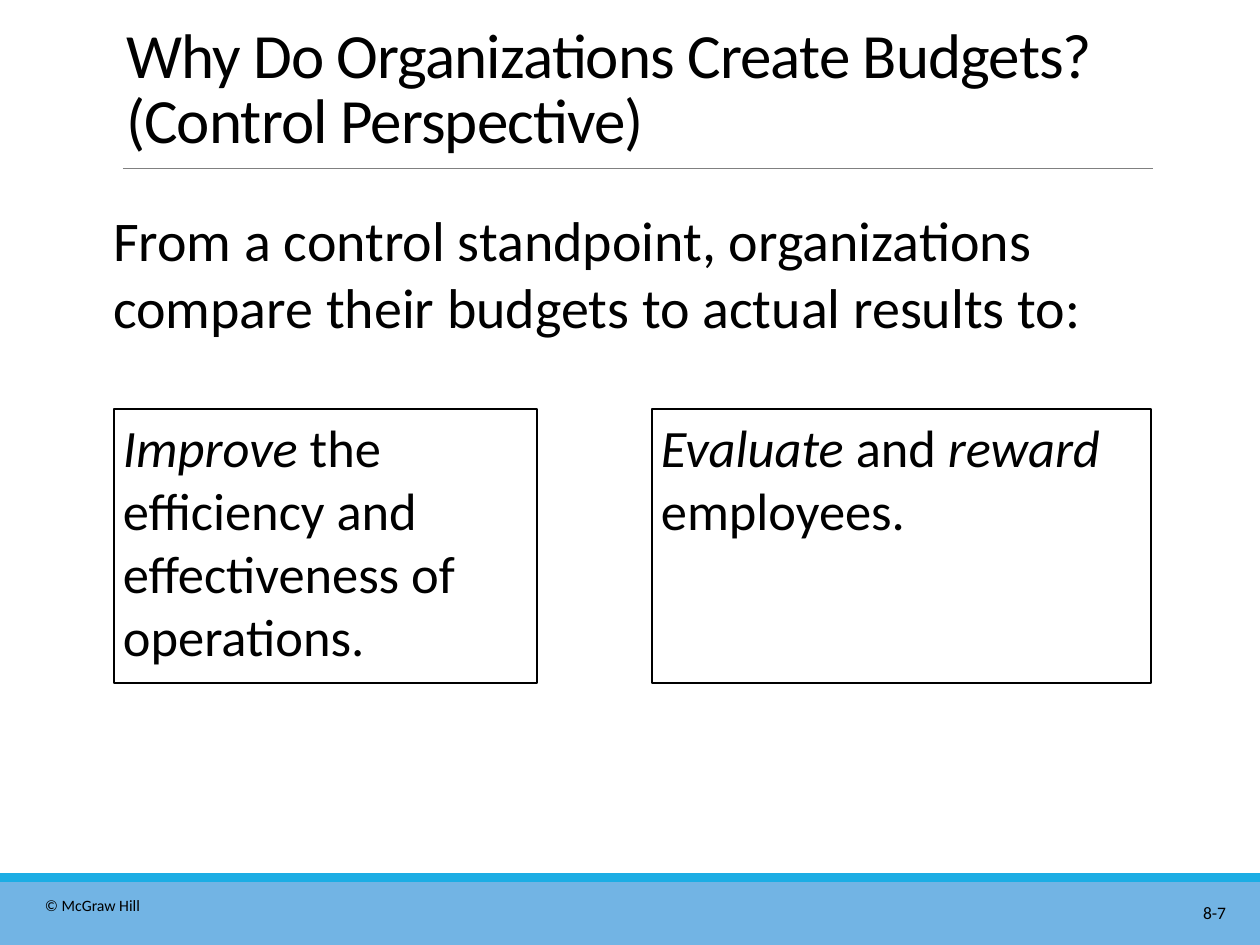
import dataclasses

import pptx
import pptx.dml.color
import pptx.enum.shapes
import pptx.enum.text
import pptx.oxml
import pptx.oxml.ns
import pptx.util

EMU_PER_INCH = 914400
PX_PER_INCH = 126
ALIGN = pptx.enum.text.PP_ALIGN
ANCHOR = pptx.enum.text.MSO_ANCHOR


@dataclasses.dataclass(frozen=True)
class Theme:
    font: str = "Calibri"
    ink: str = "000000"
    rule: str = "808080"
    band: str = "72B4E4"
    stripe: str = "1CADE4"
    title_size: int = 36
    intro_size: int = 32
    goal_size: int = 30
    number_size: int = 10
    copyright_size: int = 9


THEME = Theme()


def px(length):
    return pptx.util.Emu(round(length * EMU_PER_INCH / PX_PER_INCH))


def color(value):
    return pptx.dml.color.RGBColor.from_string(value)


def format_runs(paragraph, size):
    for run in paragraph.runs:
        run.font.name = THEME.font
        run.font.size = pptx.util.Pt(size)
        run.font.color.rgb = color(THEME.ink)


def set_frame(frame, side_inset, anchor=ANCHOR.TOP):
    frame.word_wrap = True
    frame.auto_size = pptx.enum.text.MSO_AUTO_SIZE.NONE
    frame.vertical_anchor = anchor
    frame.margin_left = frame.margin_right = px(side_inset)
    frame.margin_top = frame.margin_bottom = px(6)


def add_rectangle(slide, left, top, width, height, fill=None, line=None):
    rectangle = slide.shapes.add_shape(
        pptx.enum.shapes.MSO_SHAPE.RECTANGLE,
        px(left), px(top), px(width), px(height))
    rectangle.shadow.inherit = False
    if fill:
        rectangle.fill.solid()
        rectangle.fill.fore_color.rgb = color(fill)
    else:
        rectangle.fill.background()
    if line:
        rectangle.line.color.rgb = color(line)
        rectangle.line.width = pptx.util.Pt(1.5)
    else:
        rectangle.line.fill.background()
    return rectangle


def add_label(slide, text, left, top, width, height, size,
              align=ALIGN.LEFT, side_inset=13):
    label = slide.shapes.add_textbox(px(left), px(top), px(width), px(height))
    set_frame(label.text_frame, side_inset)
    label.text_frame.text = text
    paragraph = label.text_frame.paragraphs[0]
    paragraph.alignment = align
    format_runs(paragraph, size)


def add_title_rule(slide, left, right, y):
    rule = slide.shapes.add_connector(
        pptx.enum.shapes.MSO_CONNECTOR.STRAIGHT,
        px(left), px(y), px(right), px(y))
    rule.line.color.rgb = color(THEME.rule)
    rule.line.width = pptx.util.Pt(0.5)
    rule._element.spPr.append(pptx.oxml.parse_xml(
        f"<a:effectLst {pptx.oxml.ns.nsdecls('a')}/>"))


def set_title(slide, text, left, top, width, height):
    title = slide.shapes.title
    title.left, title.top = px(left), px(top)
    title.width, title.height = px(width), px(height)
    set_frame(title.text_frame, 13, ANCHOR.BOTTOM)
    title.text_frame.text = text
    paragraph = title.text_frame.paragraphs[0]
    paragraph.alignment = ALIGN.LEFT
    paragraph.line_spacing = 0.85
    format_runs(paragraph, THEME.title_size)
    for run in paragraph.runs:
        run.font._element.set("spc", "-50")


def add_goal(slide, phrases, left, width):
    goal = add_rectangle(slide, left, 409, width, 274, line=THEME.ink)
    set_frame(goal.text_frame, 0)
    paragraph = goal.text_frame.paragraphs[0]
    paragraph.alignment = ALIGN.LEFT
    paragraph._p.get_or_add_pPr().set("marL", str(px(9)))
    for text, italic in phrases:
        run = paragraph.add_run()
        run.text = text
        run.font.italic = italic
    format_runs(paragraph, THEME.goal_size)


def main():
    deck = pptx.Presentation()
    deck.slide_width, deck.slide_height = px(1260), px(945)
    slide = deck.slides.add_slide(deck.slide_layouts[5])

    add_rectangle(slide, 0, 882, 1260, 63, fill=THEME.band)
    add_rectangle(slide, 0, 873, 1260, 9, fill=THEME.stripe)
    add_label(slide, "8-7", 1071, 896, 168, 34, THEME.number_size, ALIGN.RIGHT)
    add_label(slide, "© McGraw Hill", 32, 890, 147, 32, THEME.copyright_size)
    add_title_rule(slide, 123, 1153, 168)

    set_title(slide, "Why Do Organizations Create Budgets? (Control Perspective)",
              113, 21, 1040, 141)
    add_label(slide, "From a control standpoint, organizations compare their "
              "budgets to actual results to:",
              113, 199, 1040, 147, THEME.intro_size, side_inset=0)
    add_goal(slide, [("Improve", True),
                     (" the efficiency and effectiveness of operations.", False)],
             114, 423)
    add_goal(slide, [("Evaluate ", True), ("and ", False),
                     ("reward", True), (" employees.", False)],
             652, 499)

    deck.save("out.pptx")


if __name__ == "__main__":
    main()
